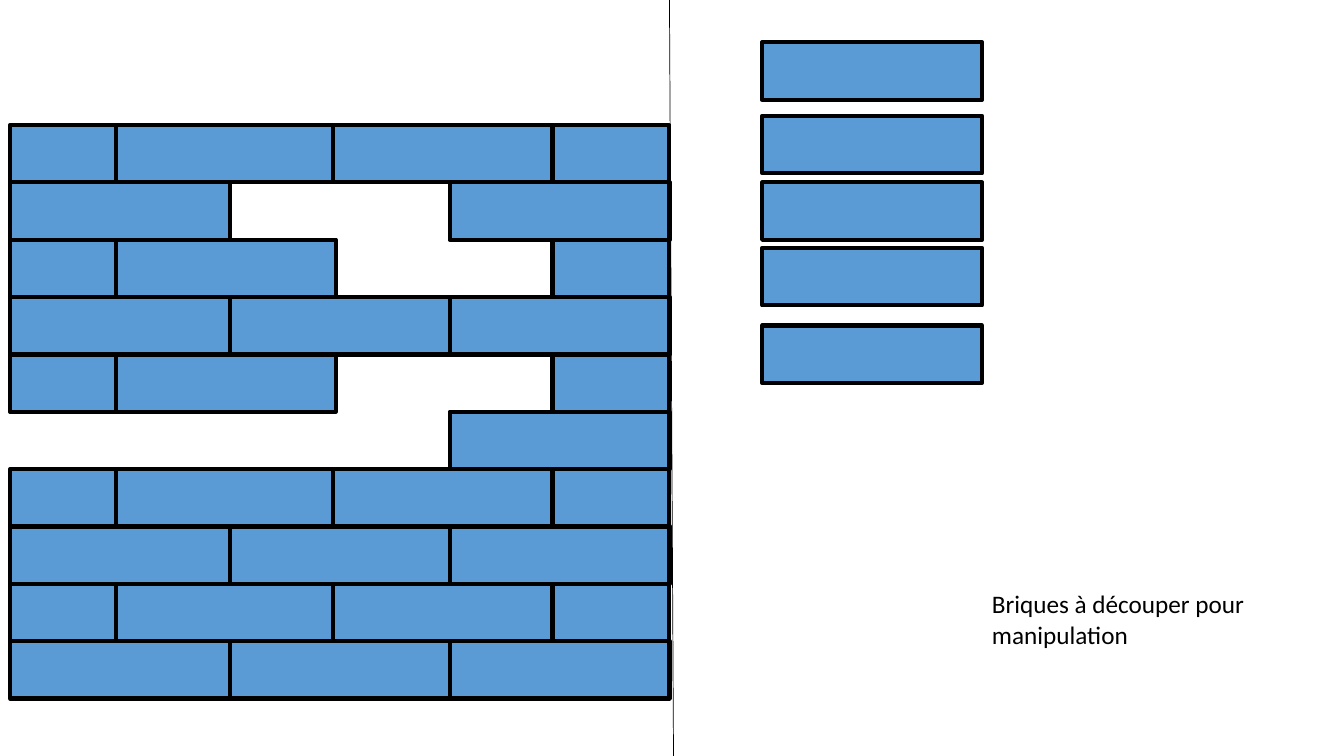
from dataclasses import dataclass

from pptx import Presentation
from pptx.dml.color import RGBColor
from pptx.enum.shapes import MSO_CONNECTOR, MSO_SHAPE
from pptx.enum.text import MSO_AUTO_SIZE
from pptx.oxml.ns import qn
from pptx.util import Inches, Pt
from lxml.etree import SubElement


@dataclass(frozen=True)
class Theme:
    brick: RGBColor = RGBColor(0x5B, 0x9B, 0xD5)
    ink: RGBColor = RGBColor(0, 0, 0)
    brick_line: Pt = Pt(3)
    divider_line: Pt = Pt(0.5)
    font: str = "Calibri"
    text_size: Pt = Pt(18)


THEME = Theme()
BRICK_WIDTH, BRICK_HEIGHT = 2.18, 0.57
WALL_LEFT, WALL_TOP, WALL_BOTTOM_ROW = 0.1, 1.24, 6.36
ROW_COUNT = 10
ROW_PITCH = (WALL_BOTTOM_ROW - WALL_TOP) / (ROW_COUNT - 1)

# Each course lists the left edge and width of its bricks.
STAGGERED_COURSE = [(WALL_LEFT, 1.05), (1.15, BRICK_WIDTH), (3.3, BRICK_WIDTH), (5.48, 1.16)]
FULL_COURSE = [(WALL_LEFT + column * BRICK_WIDTH, BRICK_WIDTH) for column in range(3)]
HOLES = {(1, 1), (2, 2), (4, 2), (5, 0), (5, 1)}  # row, position in the course
LOOSE_BRICK_LEFT = 7.56
LOOSE_BRICK_TOPS = [0.42, 1.15, 1.81, 2.46, 3.23]


def add_brick(slide, left, top, width):
    brick = slide.shapes.add_shape(
        MSO_SHAPE.RECTANGLE, Inches(left), Inches(top), Inches(width), Inches(BRICK_HEIGHT)
    )
    brick.shadow.inherit = False
    brick.fill.solid()
    brick.fill.fore_color.rgb = THEME.brick
    brick.line.color.rgb = THEME.ink
    brick.line.width = THEME.brick_line


presentation = Presentation()
presentation.slide_width = Inches(13.33)
presentation.slide_height = Inches(7.5)
slide = presentation.slides.add_slide(presentation.slide_layouts[6])

divider = slide.shapes.add_connector(
    MSO_CONNECTOR.STRAIGHT, Inches(6.64), Inches(0), Inches(6.68), Inches(7.5)
)
divider.line.color.rgb = THEME.ink
divider.line.width = THEME.divider_line
SubElement(divider.element.spPr, qn("a:effectLst"))

for row in reversed(range(ROW_COUNT)):
    course = FULL_COURSE if row % 2 else STAGGERED_COURSE
    for position, (left, width) in enumerate(course):
        if (row, position) not in HOLES:
            add_brick(slide, left, WALL_TOP + row * ROW_PITCH, width)

for top in LOOSE_BRICK_TOPS:
    add_brick(slide, LOOSE_BRICK_LEFT, top, BRICK_WIDTH)

caption = slide.shapes.add_textbox(Inches(9.74), Inches(5.79), Inches(2.78), Inches(0.71))
caption.text_frame.word_wrap = True
caption.text_frame.auto_size = MSO_AUTO_SIZE.SHAPE_TO_FIT_TEXT
caption_run = caption.text_frame.paragraphs[0].add_run()
caption_run.text = "Briques à découper pour manipulation"
for attribute, value in {"name": THEME.font, "size": THEME.text_size}.items():
    setattr(caption_run.font, attribute, value)
caption_run.font.color.rgb = THEME.ink

presentation.save("out.pptx")
